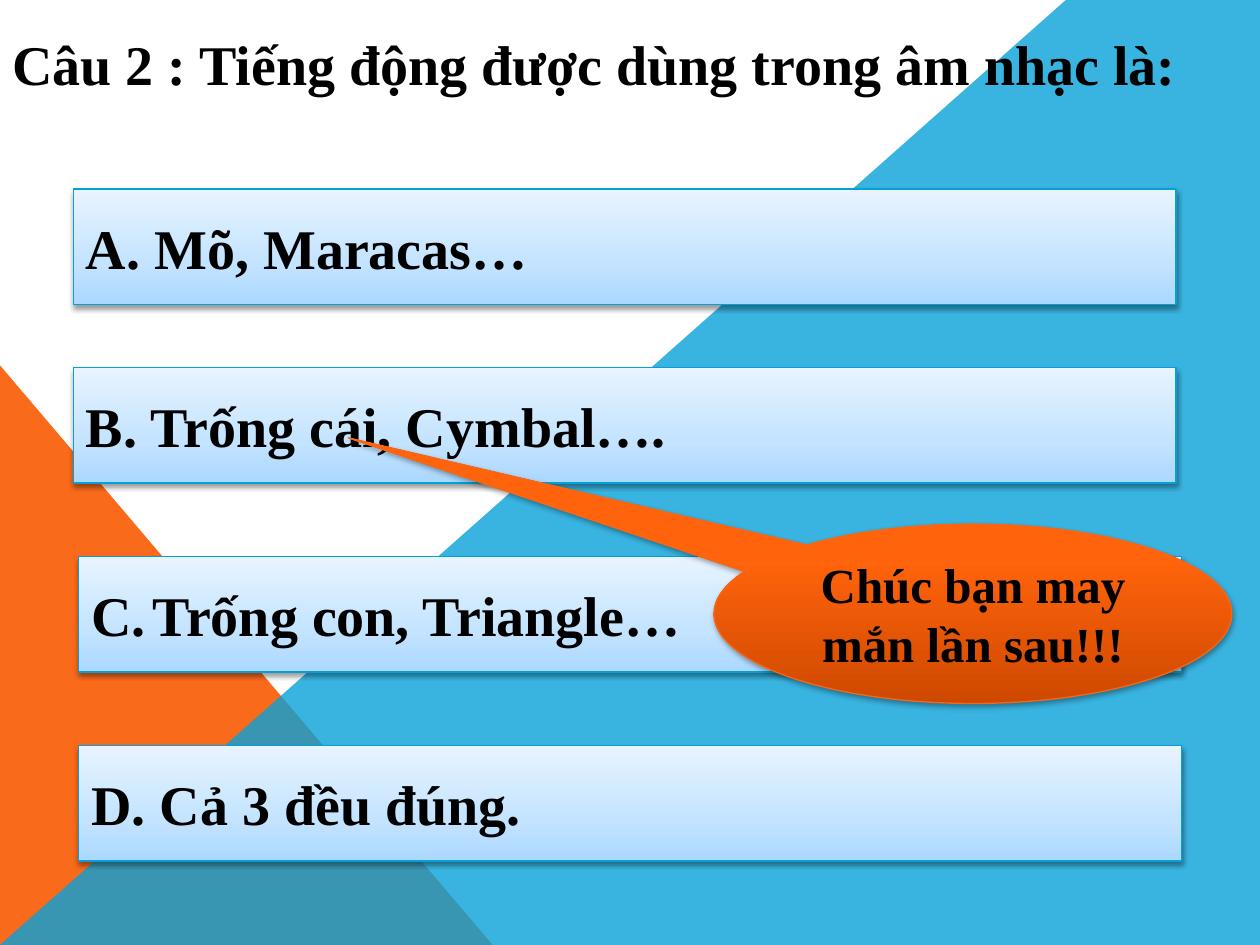
from copy import deepcopy

from lxml import etree
from pptx import Presentation
from pptx.dml.color import RGBColor
from pptx.enum import shapes, text
from pptx.oxml.ns import qn
from pptx.util import Pt

COLORS = {
    "orange": "F96A1B",
    "blue": "08A1D9",
    "ink": "000000",
    "answer_line": "03A0D9",
    "callout_line": "F96615",
}
ANSWER_STOPS = [(0, "ABD8FF"), (0.35, "C3E3FF"), (1, "E8F4FF")]
CALLOUT_STOPS = [(0, "CE4900"), (0.8, "FF630C"), (1, "FF640E")]
SERIF = "Times New Roman"
ANSWERS = [
    (42, 108, ["A. Mõ, Maracas…"]),
    (42, 210, ["B. Trống cái, Cymbal…."]),
    (45, 318, ["C.", " ", "Trống con, Triangle…"]),
    (45, 426, ["D. Cả 3 đều đúng."]),
]


def rgb(name):
    return RGBColor.from_string(COLORS[name])


def set_gradient(shape, stops):
    shape.fill.gradient()
    shape.fill.gradient_angle = 90
    stop_list = shape._element.spPr.find(".//" + qn("a:gsLst"))
    while len(stop_list) < len(stops):
        stop_list.append(deepcopy(stop_list[0]))
    for stop, (position, color) in zip(shape.fill.gradient_stops, stops):
        stop.position = position
        stop.color.rgb = RGBColor.from_string(color)


def set_alpha(color, percent):
    etree.SubElement(color, qn("a:alpha")).set("val", str(percent * 1000))


def add_shadow(shape, distance, opacity):
    shape.shadow.inherit = False
    effects = shape._element.spPr.find(qn("a:effectLst"))
    shadow = etree.SubElement(effects, qn("a:outerShdw"), {
        "blurRad": str(Pt(3.1)), "dist": str(Pt(distance)),
        "dir": "5400000", "rotWithShape": "0",
    })
    set_alpha(etree.SubElement(shadow, qn("a:srgbClr"), val=COLORS["ink"]), opacity)


def write(shape, parts, size, align):
    frame = shape.text_frame
    frame.word_wrap = True
    frame.vertical_anchor = text.MSO_ANCHOR.MIDDLE
    paragraph = frame.paragraphs[0]
    paragraph.alignment = align
    for part in parts:
        run = paragraph.add_run()
        run.text = part
        spacer = part == " "
        run.font.name = "Cabin" if spacer else SERIF
        run.font.size = Pt(18 if spacer else size)
        run.font.bold = not spacer
        run.font.color.rgb = rgb("ink")


def add_background(slide, left, top, width, height):
    triangle = slide.shapes.add_shape(
        shapes.MSO_SHAPE.RIGHT_TRIANGLE,
        Pt(left), Pt(top + 208.8), Pt(281.5), Pt(height - 208.8))
    builder = slide.shapes.build_freeform(Pt(left), Pt(top + height))
    builder.add_line_segments([
        (Pt(left + 609.1), Pt(top)),
        (Pt(left + width), Pt(top)),
        (Pt(left + width), Pt(top + height)),
    ], close=True)
    slope = builder.convert_to_shape()
    for part, color in ((triangle, "orange"), (slope, "blue")):
        part.shadow.inherit = False
        part.fill.solid()
        part.fill.fore_color.rgb = rgb(color)
        part.line.fill.background()
    set_alpha(slope._element.spPr.find(qn("a:solidFill"))[0], 80)


def add_question(slide, left, top, width, height):
    question = slide.shapes.add_textbox(Pt(left), Pt(top), Pt(width), Pt(height))
    write(question, ["Câu 2 : Tiếng động được dùng trong âm nhạc là:"],
          32, text.PP_ALIGN.LEFT)


def add_answer(slide, left, top, width, height, parts):
    answer = slide.shapes.add_shape(
        shapes.MSO_SHAPE.RECTANGLE, Pt(left), Pt(top), Pt(width), Pt(height))
    set_gradient(answer, ANSWER_STOPS)
    answer.line.color.rgb = rgb("answer_line")
    answer.line.width = Pt(0.75)
    add_shadow(answer, 1.6, 38)
    write(answer, parts, 32, text.PP_ALIGN.LEFT)


def add_reply(slide, left, top, width, height):
    reply = slide.shapes.add_shape(
        shapes.MSO_SHAPE.OVAL_CALLOUT, Pt(left), Pt(top), Pt(width), Pt(height))
    reply.adjustments[0] = -1.206
    reply.adjustments[1] = -0.981
    set_gradient(reply, CALLOUT_STOPS)
    reply.line.color.rgb = rgb("callout_line")
    reply.line.width = Pt(0.75)
    add_shadow(reply, 1.8, 35)
    write(reply, ["Chúc bạn may mắn lần sau!!!"], 28, text.PP_ALIGN.CENTER)


def main():
    deck = Presentation()
    deck.slide_width, deck.slide_height = Pt(720), Pt(540)
    slide = deck.slides.add_slide(deck.slide_layouts[6])
    add_background(slide, 0, 0, 720, 540)
    add_question(slide, 0, 0, 720, 72)
    for left, top, parts in ANSWERS:
        add_answer(slide, left, top, 630, 66, parts)
    add_reply(slide, 408, 299.5, 296, 102.5)
    deck.save("out.pptx")


if __name__ == "__main__":
    main()
